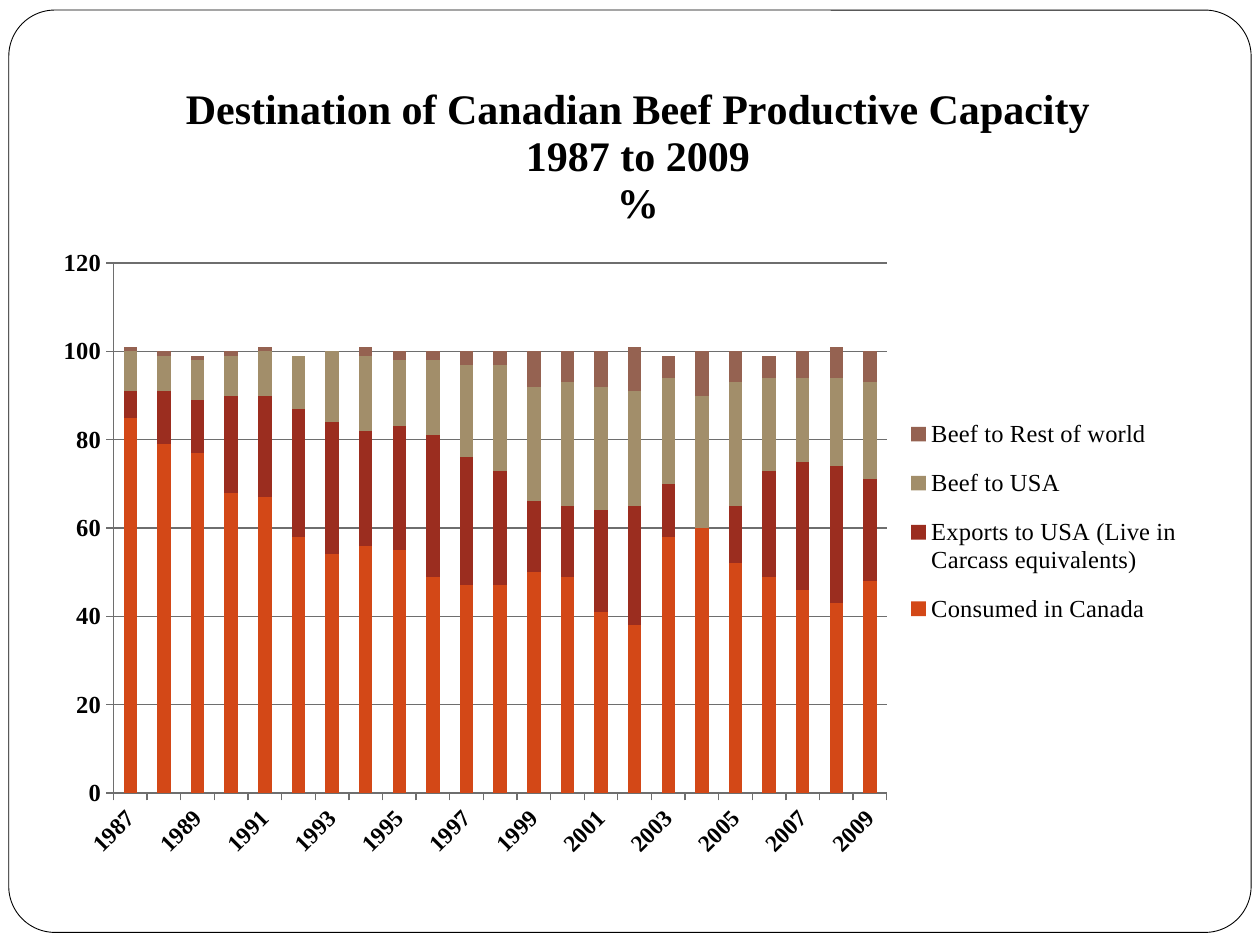
from dataclasses import dataclass

from lxml import etree
from pptx import Presentation
from pptx.chart.data import CategoryChartData
from pptx.dml.color import RGBColor
from pptx.enum.chart import XL_CHART_TYPE, XL_LEGEND_POSITION, XL_TICK_MARK
from pptx.enum.shapes import MSO_SHAPE
from pptx.oxml.ns import qn
from pptx.util import Inches, Pt

STACKED = XL_CHART_TYPE.COLUMN_STACKED
ROUNDED = MSO_SHAPE.ROUNDED_RECTANGLE
RIGHT = XL_LEGEND_POSITION.RIGHT
OUTSIDE = XL_TICK_MARK.OUTSIDE
NO_TICK = XL_TICK_MARK.NONE


@dataclass(frozen=True)
class Theme:
    font: str = "Times New Roman"
    text: RGBColor = RGBColor(0, 0, 0)
    paper: RGBColor = RGBColor(255, 255, 255)
    grid: RGBColor = RGBColor(0x6E, 0x6E, 0x6E)
    title_size: Pt = Pt(24)
    label_size: Pt = Pt(14)
    year_size: Pt = Pt(13.4)


THEME = Theme()
TITLE_LINES = ["Destination of Canadian Beef Productive Capacity", "1987 to 2009", "%"]
YEARS = [str(year) for year in range(1987, 2010)]
DESTINATIONS = [
    ("Consumed in Canada", "D34817",
     [85, 79, 77, 68, 67, 58, 54, 56, 55, 49, 47, 47,
      50, 49, 41, 38, 58, 60, 52, 49, 46, 43, 48]),
    ("Exports to USA (Live in Carcass equivalents)", "9B2D1F",
     [6, 12, 12, 22, 23, 29, 30, 26, 28, 32, 29, 26,
      16, 16, 23, 27, 12, 0, 13, 24, 29, 31, 23]),
    ("Beef to USA", "A28E6A",
     [9, 8, 9, 9, 10, 12, 16, 17, 15, 17, 21, 24,
      26, 28, 28, 26, 24, 30, 28, 21, 19, 20, 22]),
    ("Beef to Rest of world", "956251",
     [1, 1, 1, 1, 1, 0, 0, 2, 2, 2, 3, 3,
      8, 7, 8, 10, 5, 10, 7, 5, 6, 7, 7]),
]


def set_font(font, size, bold=False):
    font.name = THEME.font
    font.size = size
    font.bold = bold
    font.color.rgb = THEME.text


def set_layout(element, index, inner=False, **fractions):
    for old in element.findall(qn("c:layout")):
        element.remove(old)
    layout = etree.Element(qn("c:layout"))
    manual = etree.SubElement(layout, qn("c:manualLayout"))
    settings = {"layoutTarget": "inner"} if inner else {}
    settings.update(xMode="edge", yMode="edge", **fractions)
    for name, value in settings.items():
        etree.SubElement(manual, qn(f"c:{name}")).set("val", str(value))
    element.insert(index, layout)


def add_frame(slide, box):
    frame = slide.shapes.add_shape(ROUNDED, *box)
    frame.adjustments[0] = 0.05
    frame.shadow.inherit = False
    frame.fill.solid()
    frame.fill.fore_color.rgb = THEME.paper
    frame.line.color.rgb = THEME.text
    frame.line.width = Pt(0.5)


def format_title(chart):
    title = chart.chart_title
    text_frame = title.text_frame
    for number, line in enumerate(TITLE_LINES):
        paragraph = text_frame.add_paragraph() if number else text_frame.paragraphs[0]
        run = paragraph.add_run()
        run.text = line
        set_font(run.font, THEME.title_size, True)
    title.include_in_layout = True
    set_layout(title._element, 1, x=0.12, y=0.03)


def format_axes(chart):
    years, percent = chart.category_axis, chart.value_axis
    for axis, size in ((years, THEME.year_size), (percent, THEME.label_size)):
        set_font(axis.tick_labels.font, size, True)
        axis.major_tick_mark = OUTSIDE
        axis.minor_tick_mark = NO_TICK
        axis.format.line.color.rgb = THEME.grid
        axis.format.line.width = Pt(0.75)
    percent.minimum_scale, percent.maximum_scale, percent.major_unit = 0, 120, 20
    percent.tick_labels.number_format = "0"
    percent.tick_labels.number_format_is_linked = False
    percent.has_major_gridlines = True
    percent.major_gridlines.format.line.color.rgb = THEME.grid
    percent.major_gridlines.format.line.width = Pt(0.75)
    years._element.find(qn("c:txPr")).find(qn("a:bodyPr")).set("rot", "-2700000")
    skip = etree.Element(qn("c:tickLblSkip"))
    skip.set("val", "2")
    years._element.find(qn("c:noMultiLvlLbl")).addprevious(skip)


def format_legend(chart):
    chart.has_legend = True
    legend = chart.legend
    legend.position = RIGHT
    legend.include_in_layout = False
    set_font(legend.font, THEME.label_size)
    set_layout(legend._element, 1, x=0.71, y=0.42, w=0.28, h=0.3)


def add_destination_chart(slide, box):
    data = CategoryChartData(number_format="0")
    data.categories = YEARS
    for name, _, values in DESTINATIONS:
        data.add_series(name, values)
    chart = slide.shapes.add_chart(STACKED, *box, data).chart
    set_font(chart.font, Pt(10))
    plot = chart.plots[0]
    plot.gap_width = 150
    plot.overlap = 100
    plot.vary_by_categories = False
    for series, (_, color, _) in zip(plot.series, DESTINATIONS):
        series.format.fill.solid()
        series.format.fill.fore_color.rgb = RGBColor.from_string(color)
    format_title(chart)
    format_axes(chart)
    format_legend(chart)
    plot_area = chart._chartSpace.chart.plotArea
    set_layout(plot_area, 0, inner=True, x=0.062, y=0.254, w=0.655, h=0.648)


def main():
    presentation = Presentation()
    presentation.slide_width, presentation.slide_height = Inches(10), Inches(7.5)
    slide = presentation.slides.add_slide(presentation.slide_layouts[6])
    add_frame(slide, [Inches(value) for value in (0.07, 0.08, 9.86, 7.32)])
    add_destination_chart(slide, [Inches(value) for value in (0.32, 0.44, 9.37, 6.49)])
    presentation.save("out.pptx")


if __name__ == "__main__":
    main()
